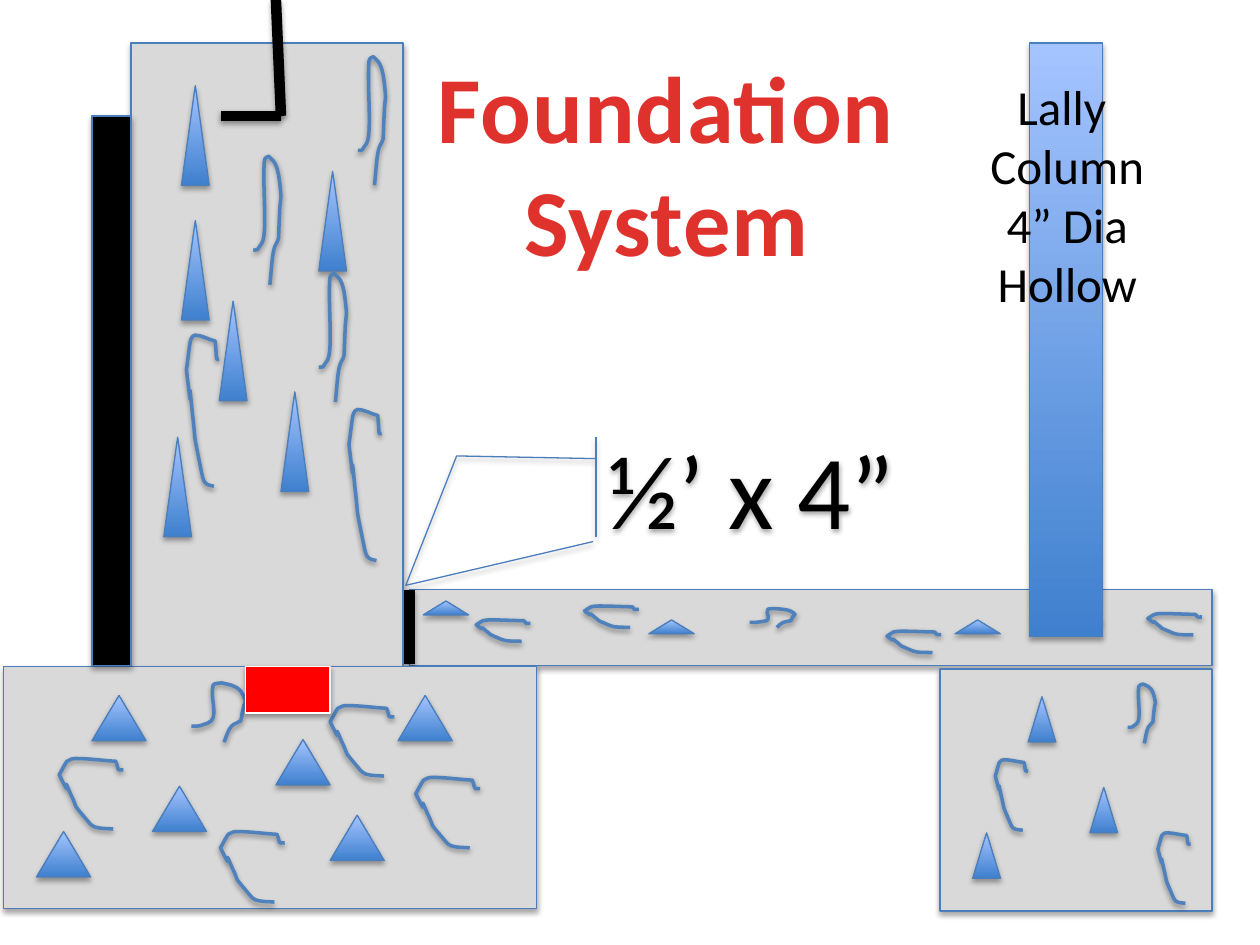
from dataclasses import dataclass

from lxml.etree import SubElement
from pptx import Presentation
from pptx.dml.color import RGBColor
from pptx.enum.shapes import MSO_CONNECTOR, MSO_SHAPE
from pptx.enum.text import MSO_ANCHOR, MSO_AUTO_SIZE, PP_ALIGN
from pptx.oxml.ns import qn
from pptx.util import Inches, Pt

COLORS = {
    "concrete": "D9D9D9",
    "edge": "4B7EBC",
    "strand": "4F81BD",
    "steel_dark": "3F80CE",
    "steel_light": "A4C4FF",
    "black": "000000",
    "keyway": "FF0000",
    "white": "FFFFFF",
    "title": "E0322D",
}

Point = tuple[float, float]
Box = tuple[float, float, float, float]

HOOK: list[Point] = [
    (0.84, 1),
    (0.75, 0.99), (0.65, 1), (0.55, 0.97),
    (0.49, 0.95), (0.45, 0.89), (0.41, 0.85),
    (0.18, 0.6), (0.31, 0.75), (0.18, 0.51),
    (0, 0.12), (0.25, 0.7), (0, 0.23),
    (0.04, 0.17), (0.08, 0.09), (0.12, 0.04),
    (0.16, 0.01), (0.22, 0), (0.26, 0),
    (0.47, 0), (0.67, 0.03), (0.88, 0.04),
    (0.94, 0.18), (0.88, 0.16), (1, 0.16),
]
CURL: list[Point] = [
    (0.6, 1),
    (0.65, 0.9), (0.67, 0.8), (0.74, 0.73),
    (0.79, 0.68), (0.86, 0.68), (0.91, 0.64),
    (0.93, 0.58), (0.93, 0.51), (0.95, 0.45),
    (0.95, 0.4), (0.98, 0.36), (1, 0.31),
    (0.98, 0.25), (0.95, 0.19), (0.91, 0.14),
    (0.81, 0.03), (0.67, 0.03), (0.56, 0),
    (0.51, 0.01), (0.42, 0), (0.4, 0.04),
    (0.33, 0.25), (0.53, 0.61), (0.3, 0.68),
    (0.12, 0.73), (0.21, 0.73), (0, 0.73),
]


@dataclass
class Concrete:
    box: Box
    stone_size: Point
    stones: list[Point]
    hook_size: Point
    hooks: list[Point]
    curl_size: Point
    curls: list[Point]


SLAB = Concrete(
    (3.25, 4.68, 6.37, 0.6),
    (0.36, 0.11), [(5.15, 4.92), (7.58, 4.92), (3.36, 4.77), (8.39, 4.83)],
    (0.43, 0.17), [(9.11, 4.87), (3.78, 4.92), (7.04, 5.01), (4.64, 4.81)],
    (0.36, 0.15), [(5.95, 4.83)],
)
WALL = Concrete(
    (1.04, 0.34, 2.16, 4.95),
    (0.22, 0.79),
    [(1.74, 2.39), (1.3, 3.47), (2.23, 3.11), (1.44, 1.75), (2.53, 1.36), (1.44, 0.68)],
    (0.26, 1.2), [(1.48, 2.66), (2.77, 3.25)],
    (0.22, 1.02), [(2.53, 2.17), (2.01, 1.24), (2.84, 0.45)],
)
COLUMN_FOOTING = Concrete(
    (7.46, 5.31, 2.16, 1.92),
    (0.22, 0.36), [(8.16, 5.53), (7.72, 6.61), (8.65, 6.25)],
    (0.26, 0.56), [(7.9, 6.03), (9.19, 6.61)],
    (0.22, 0.47), [(8.95, 5.43)],
)
WALL_FOOTING = Concrete(
    (0.03, 5.29, 4.23, 1.92),
    (0.43, 0.36),
    [(0.73, 5.52), (3.16, 5.52), (2.19, 5.87), (0.29, 6.6), (1.21, 6.24), (2.62, 6.47)],
    (0.51, 0.56), [(3.3, 6.17), (0.47, 6.02), (2.62, 5.6), (1.75, 6.6)],
    (0.43, 0.47), [(1.52, 5.42)],
)


def rgb(name: str) -> RGBColor:
    return RGBColor.from_string(COLORS[name])


def set_line(sp, color: str, width: float, distance: float, alpha: int) -> None:
    sp.line.color.rgb = rgb(color)
    sp.line.width = Pt(width)
    effects = SubElement(sp._element.spPr, qn("a:effectLst"))
    shadow = SubElement(effects, qn("a:outerShdw"), blurRad=str(Pt(3.1)),
                        dist=str(Pt(distance)), dir="5400000", rotWithShape="0")
    clr = SubElement(shadow, qn("a:srgbClr"), val=COLORS["black"])
    SubElement(clr, qn("a:alpha"), val=str(alpha * 1000))


def add_block(s, kind: MSO_SHAPE, box: Box, fill: str | None = None, edge: str = "edge"):
    sp = s.shapes.add_shape(kind, *map(Inches, box))
    if fill == "steel":
        sp.fill.gradient()
        sp.fill.gradient_angle = 90
        for stop, name in zip(sp.fill.gradient_stops, ("steel_dark", "steel_light")):
            stop.color.rgb = rgb(name)
    elif fill:
        sp.fill.solid()
        sp.fill.fore_color.rgb = rgb(fill)
    else:
        sp.fill.background()
    set_line(sp, edge, 0.75, 1.8, 35)
    return sp


def curve_segments(sp) -> None:
    segments = list(sp._element.iter(qn("a:lnTo")))
    outline = segments[0].getparent()
    for i in range(0, len(segments), 3):
        curve = SubElement(outline, qn("a:cubicBezTo"))
        for segment in segments[i:i + 3]:
            curve.append(segment[0])
            outline.remove(segment)


def add_strand(s, controls: list[Point], at: Point, size: Point) -> None:
    points = [(Inches(at[0] + x * size[0]), Inches(at[1] + y * size[1]))
              for x, y in controls]
    builder = s.shapes.build_freeform(*points[0])
    builder.add_line_segments(points[1:], close=False)
    sp = builder.convert_to_shape()
    curve_segments(sp)
    sp.fill.background()
    set_line(sp, "strand", 2, 1.6, 38)


def add_bar(s, start: Point, end: Point) -> None:
    bar = s.shapes.add_connector(MSO_CONNECTOR.STRAIGHT, *map(Inches, start + end))
    set_line(bar, "black", 6, 1.6, 38)


def add_concrete(s, part: Concrete) -> None:
    add_block(s, MSO_SHAPE.RECTANGLE, part.box, "concrete")
    for at in part.stones:
        add_block(s, MSO_SHAPE.ISOSCELES_TRIANGLE, at + part.stone_size, "steel")
    for at in part.hooks:
        add_strand(s, HOOK, at, part.hook_size)
    for at in part.curls:
        add_strand(s, CURL, at, part.curl_size)


def write_text(sp, text: str, *, size: float, color: str = "black", bold: bool = False,
               wrap: bool = True, grow: bool = False, spacing: float = 0,
               anchor: MSO_ANCHOR = MSO_ANCHOR.TOP) -> None:
    tf = sp.text_frame
    tf.word_wrap = wrap
    tf.vertical_anchor = anchor
    if grow:
        tf.auto_size = MSO_AUTO_SIZE.SHAPE_TO_FIT_TEXT
    tf.text = text
    for p in tf.paragraphs:
        p.alignment = PP_ALIGN.CENTER
        for r in p.runs:
            r.font.name = "Calibri"
            r.font.size = Pt(size)
            r.font.bold = bold
            r.font.color.rgb = rgb(color)
            if spacing:
                r.font._element.set("spc", str(int(spacing * 100)))


def add_text(s, box: Box, text: str, **style) -> None:
    write_text(s.shapes.add_textbox(*map(Inches, box)), text, grow=True, **style)


def main() -> None:
    prs = Presentation()
    prs.slide_width, prs.slide_height = Inches(10), Inches(7.5)
    s = prs.slides.add_slide(prs.slide_layouts[6])

    add_concrete(s, SLAB)
    add_bar(s, (3.25, 4.68), (3.25, 5.27))
    add_concrete(s, WALL)
    add_bar(s, (2.23, 0.92), (1.75, 0.92))
    add_concrete(s, COLUMN_FOOTING)
    add_concrete(s, WALL_FOOTING)
    add_block(s, MSO_SHAPE.RECTANGLE, (1.95, 5.29, 0.67, 0.37), "keyway", "white")
    add_bar(s, (2.23, 0.92), (2.19, 0))

    add_text(s, (3.36, 0.34, 3.86, 1.92), "Foundation \nSystem", size=54,
             color="title", bold=True, wrap=False, spacing=0.5)
    add_block(s, MSO_SHAPE.RECTANGLE, (0.73, 0.92, 0.31, 4.36), "black")

    callout = add_block(s, MSO_SHAPE.LINE_CALLOUT_3_ACCENT_BAR, (4.21, 3.47, 3.51, 0.79))
    bends = (0.215, 0.148, 0.188, -0.167, 1.488, -0.282, 1.048, 0.142)
    for i, value in enumerate(bends):
        callout.adjustments[i] = value
    write_text(callout, "½’ x 4”", size=60, anchor=MSO_ANCHOR.MIDDLE)

    add_block(s, MSO_SHAPE.RECTANGLE, (8.17, 0.34, 0.58, 4.71), "steel")
    add_text(s, (7.5, 0.56, 1.94, 1.99), "Lally \nColumn\n4” Dia Hollow", size=28)

    prs.save("out.pptx")


if __name__ == "__main__":
    main()
